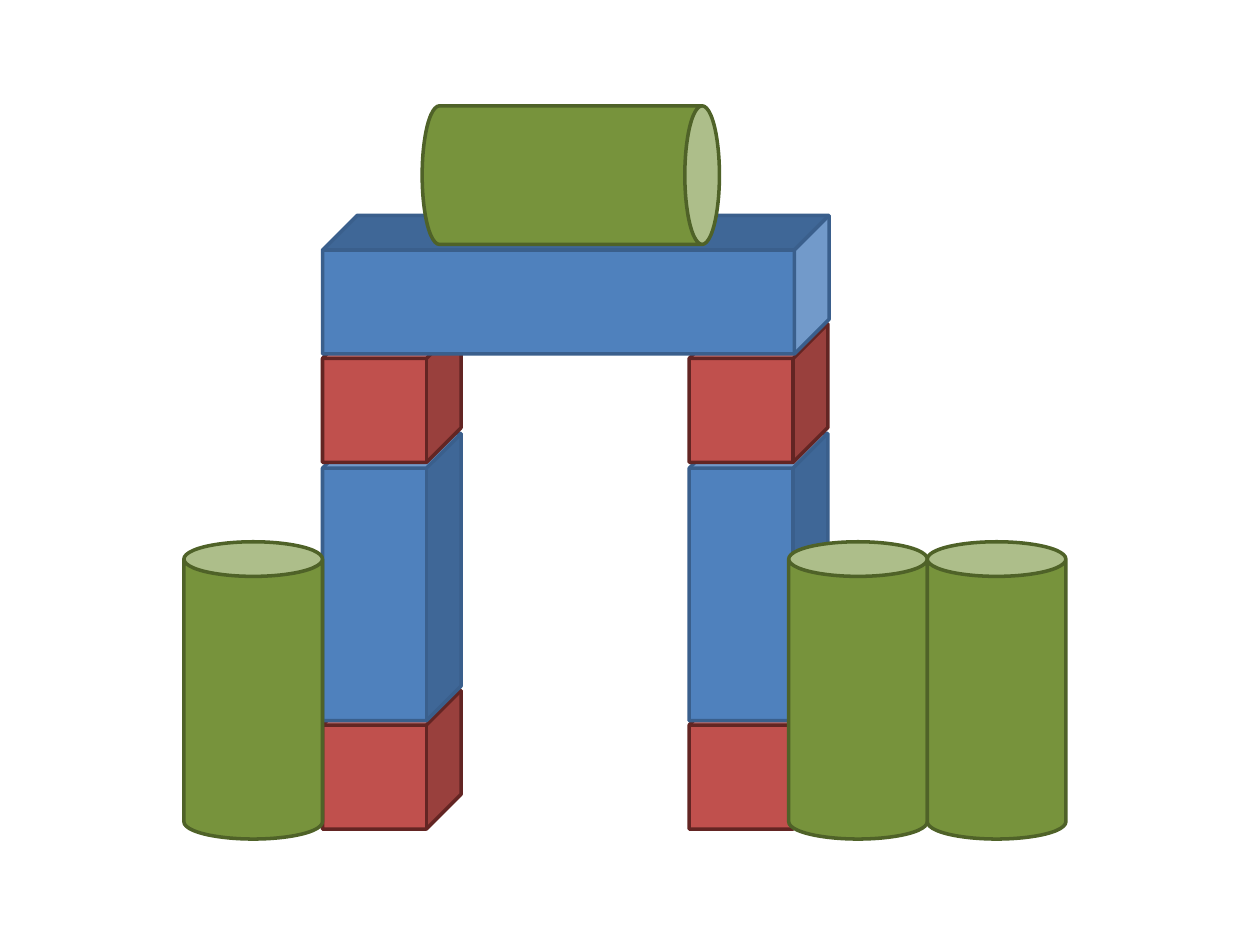
"""Builds a slide with an arch of toy blocks and cylinders."""
from pptx import Presentation
from pptx.dml.color import RGBColor
from pptx.enum.shapes import MSO_SHAPE
from pptx.oxml.ns import qn
from pptx.util import Inches, Pt

CUBE, CAN = MSO_SHAPE.CUBE, MSO_SHAPE.CAN
COLORS = {
    "red": "C0504D", "red_line": "632523",
    "blue": "4F81BD", "blue_line": "3A5F8C",
    "green": "77933C", "green_line": "4F6228",
}
BLANK_LAYOUT = 6
SIDE, PILLAR_H, BEAM_H, CAN_H = 1.1, 2.28, 4.02, 2.36


class BlockSlide:
    def __init__(self, prs):
        self.s = prs.slides.add_slide(prs.slide_layouts[BLANK_LAYOUT])
        self.line_width = Pt(2)

    def block(self, kind, color, x, y, h, rotation=0, flip=False):
        sp = self.s.shapes.add_shape(
            kind, Inches(x), Inches(y), Inches(SIDE), Inches(h))
        sp.shadow.inherit = False
        sp.rotation = rotation
        sp.fill.solid()
        sp.fill.fore_color.rgb = RGBColor.from_string(COLORS[color])
        sp.line.color.rgb = RGBColor.from_string(COLORS[color + "_line"])
        sp.line.width = self.line_width
        if flip:
            sp.element.spPr.find(qn("a:xfrm")).set("flipV", "1")

    def cube(self, color, x, y, h=SIDE, **turn):
        self.block(CUBE, color, x, y, h, **turn)

    def can(self, x, y, **turn):
        self.block(CAN, "green", x, y, CAN_H, **turn)


def main():
    prs = Presentation()
    prs.slide_width, prs.slide_height = Inches(10), Inches(7.5)
    slide = BlockSlide(prs)

    levels = (("red", 5.48, SIDE), ("blue", 3.44, PILLAR_H), ("red", 2.57, SIDE))
    for color, y, h in levels:
        for x in (5.47, 2.56):
            slide.cube(color, x, y, h)
    slide.cube("blue", 4.02, 0.25, BEAM_H, rotation=270, flip=True)

    for x in (6.26, 6.26 + SIDE, 2.56 - SIDE):
        slide.can(x, 4.3)
    slide.can(3.98, 0.21, rotation=90)

    prs.save("out.pptx")


if __name__ == "__main__":
    main()
